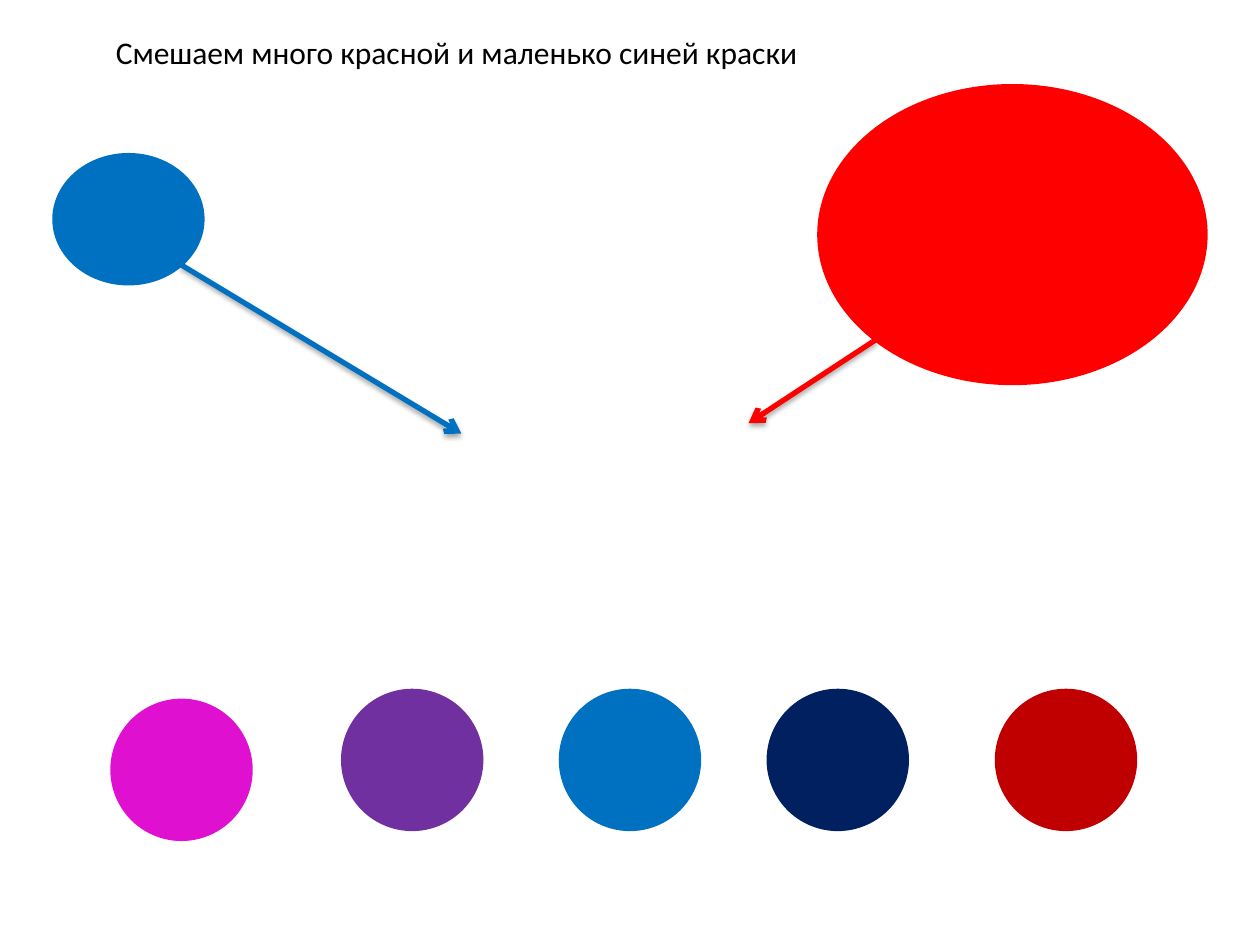
from math import sqrt

from lxml.etree import SubElement
from pptx import Presentation
from pptx.dml.color import RGBColor
from pptx.enum.shapes import MSO_CONNECTOR, MSO_SHAPE
from pptx.enum.text import MSO_ANCHOR, MSO_AUTO_SIZE, PP_ALIGN
from pptx.oxml.ns import qn
from pptx.util import Cm, Pt

BLACK = RGBColor(0x00, 0x00, 0x00)
BLUE = RGBColor(0x00, 0x70, 0xC0)
RED = RGBColor(0xFF, 0x00, 0x00)
PINK = RGBColor(0xE0, 0x10, 0xD1)
PURPLE = RGBColor(0x70, 0x30, 0xA0)
NAVY = RGBColor(0x00, 0x20, 0x60)
CRIMSON = RGBColor(0xC0, 0x00, 0x00)


def set_all(target, values):
    """Set each attribute named in a dict of format values."""
    for name, value in values.items():
        setattr(target, name, value)


def add_title(slide, box, text):
    """Place and format the title in its box."""
    title = slide.shapes.title
    set_all(title, dict(zip(("left", "top", "width", "height"), map(Cm, box))))
    frame = title.text_frame
    frame.text = text
    set_all(frame, {"word_wrap": False, "auto_size": MSO_AUTO_SIZE.SHAPE_TO_FIT_TEXT,
                    "vertical_anchor": MSO_ANCHOR.TOP})
    para = frame.paragraphs[0]
    para.alignment = PP_ALIGN.LEFT
    font = para.runs[0].font
    set_all(font, {"name": "Calibri", "size": Pt(18)})
    font.color.rgb = BLACK


def add_spot(slide, box, color):
    """Draw one spot of paint filling its box."""
    spot = slide.shapes.add_shape(MSO_SHAPE.OVAL, *map(Cm, box))
    spot.shadow.inherit = False
    spot.fill.solid()
    spot.fill.fore_color.rgb = color
    spot.line.color.rgb = color
    spot.line.width = Pt(2)


def add_arrow(slide, start, end, color):
    """Draw a shaded arrow between two points."""
    arrow = slide.shapes.add_connector(MSO_CONNECTOR.STRAIGHT, *map(Cm, start + end))
    arrow.line.color.rgb = color
    arrow.line.width = Pt(3)
    SubElement(arrow.line._get_or_add_ln(), qn("a:tailEnd"), type="arrow")
    effects = SubElement(arrow._element.spPr, qn("a:effectLst"))
    shade = SubElement(effects, qn("a:outerShdw"), blurRad=str(Pt(3.1)),
                       dist=str(Pt(1.8)), dir="5400000", rotWithShape="0")
    tint = SubElement(shade, qn("a:srgbClr"), val=str(BLACK))
    SubElement(tint, qn("a:alpha"), val="35000")


def add_paint(slide, box, color, side, end):
    """Draw a paint spot and an arrow from its lower left (-1) or right (1)."""
    left, top, width, height = box
    add_spot(slide, box, color)
    start = (left + width / 2 * (1 + side / sqrt(2)),
             top + height / 2 * (1 + 1 / sqrt(2)))
    add_arrow(slide, start, end, color)


def add_choices(slide, box, spots):
    """Draw the row of answer spots, each given as offset, drop and color."""
    left, top, size = box
    for shift, drop, color in spots:
        add_spot(slide, (left + shift, top + drop, size, size), color)


def main():
    """Build the slide on mixing paint and save it."""
    deck = Presentation()
    set_all(deck, {"slide_width": Cm(25.4), "slide_height": Cm(19.05)})
    slide = deck.slides.add_slide(deck.slide_layouts[5])
    add_title(slide, (2.08, 0.53, 14.43, 1.02),
              "Смешаем много красной и маленько синей краски")
    add_paint(slide, (1.09, 3.12, 3, 2.6), BLUE, 1, (9.3, 8.74))
    add_paint(slide, (16.51, 1.73, 7.8, 6), RED, -1, (15.09, 8.53))
    add_choices(slide, (2.26, 13.92, 2.8),
                [(0, 0.2, PINK), (4.65, 0, PURPLE), (9.04, 0, BLUE),
                 (13.23, 0, NAVY), (17.83, 0, CRIMSON)])
    deck.save("out.pptx")


if __name__ == "__main__":
    main()
